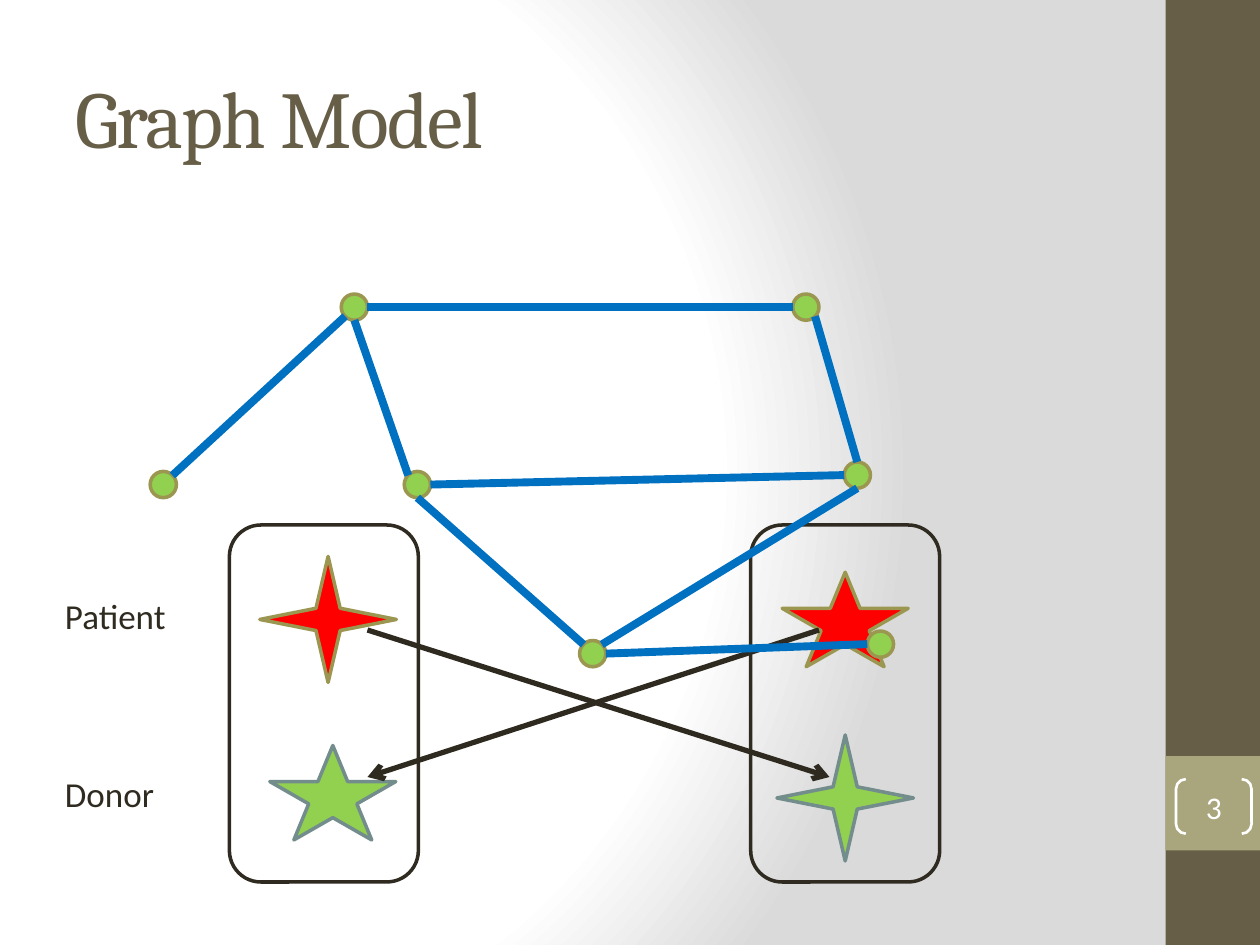
from dataclasses import dataclass
from typing import NamedTuple, Optional

from lxml.etree import SubElement
from pptx import Presentation
from pptx.dml.color import RGBColor
from pptx.enum.shapes import MSO_CONNECTOR as Connector, MSO_SHAPE as Preset
from pptx.enum.text import MSO_ANCHOR as Anchor, PP_ALIGN as Align
from pptx.oxml.ns import qn
from pptx.util import Inches, Pt

COLUMNS, ROWS = 120, 90
SLIDE_WIDTH, SLIDE_HEIGHT = Inches(10), Inches(7.5)


@dataclass(frozen=True)
class Theme:
    heading_font: str = "Cambria"
    body_font: str = "Calibri"
    title_size: float = 46
    label_size: float = 20
    number_size: float = 18
    brown: str = "675E47"
    khaki: str = "A9A57C"
    olive: str = "9B9650"
    slate: str = "738D8C"
    ink: str = "2F2B20"
    arrow: str = "2E2A1F"
    edge: str = "0070C0"
    red: str = "FF0000"
    green: str = "92D050"
    white: str = "FFFFFF"
    gray: str = "DADADA"
    outline: float = 2
    bracket_width: float = 1.5
    arrow_width: float = 3
    edge_width: float = 4.5


THEME = Theme()


class Box(NamedTuple):
    column: float
    row: float
    columns: float
    rows: float

    def at(self, site: tuple) -> tuple:
        return self.column + self.columns * site[0], self.row + self.rows * site[1]


class Figure(NamedTuple):
    preset: Preset
    box: Box
    fill: Optional[str] = None
    line: Optional[str] = None
    width: float = THEME.outline


class Label(NamedTuple):
    text: str
    box: Box
    size: float = THEME.label_size
    font: str = THEME.body_font
    color: str = THEME.ink
    anchor: Anchor = Anchor.TOP
    spacing: int = 0


class Link(NamedTuple):
    start: tuple
    end: tuple
    color: str = THEME.edge
    width: float = THEME.edge_width
    arrow: bool = False


def horizontal(columns: float) -> int:
    return round(SLIDE_WIDTH * columns / COLUMNS)


def vertical(rows: float) -> int:
    return round(SLIDE_HEIGHT * rows / ROWS)


def place(box: Box) -> tuple:
    return horizontal(box.column), vertical(box.row), horizontal(box.columns), vertical(box.rows)


def paint_background(slide) -> None:
    fill = slide.background.fill
    fill.gradient()
    gradient = fill._fill._gradFill
    for child in list(gradient):
        gradient.remove(child)
    stops = SubElement(gradient, qn("a:gsLst"))
    for position, color in ((0, THEME.white), (75, THEME.white), (100, THEME.gray)):
        stop = SubElement(stops, qn("a:gs"), pos=str(position * 1000))
        SubElement(stop, qn("a:srgbClr"), val=color)
    path_element = SubElement(gradient, qn("a:path"), {"path": "circle"})
    SubElement(path_element, qn("a:fillToRect"), l="20000", t="50000", r="100000", b="50000")


def draw_figure(slide, figure: Figure):
    shape = slide.shapes.add_shape(figure.preset, *place(figure.box))
    shape.shadow.inherit = False
    if figure.fill:
        shape.fill.solid()
        shape.fill.fore_color.rgb = RGBColor.from_string(figure.fill)
    else:
        shape.fill.background()
    if figure.line:
        shape.line.color.rgb = RGBColor.from_string(figure.line)
        shape.line.width = Pt(figure.width)
    else:
        shape.line.fill.background()
    return shape


def add_text(paragraph, text: str, size: float, font: str, color: str):
    run = paragraph.add_run()
    run.text = text
    run.font.size = Pt(size)
    run.font.name = font
    run.font.color.rgb = RGBColor.from_string(color)
    return run


def draw_label(slide, label: Label) -> None:
    frame = slide.shapes.add_textbox(*place(label.box)).text_frame
    frame.word_wrap = True
    frame.vertical_anchor = label.anchor
    run = add_text(frame.paragraphs[0], label.text, label.size, label.font, label.color)
    if label.spacing:
        run.font._element.set("spc", str(label.spacing * 100))


def draw_page_number(slide, number: str) -> None:
    shape = draw_figure(slide, Figure(Preset.DOUBLE_BRACKET, Box(112, 74.2, 7.2, 5.2),
                                      line=THEME.white, width=THEME.bracket_width))
    shape.adjustments[0] = 0.18
    frame = shape.text_frame
    frame.margin_left = frame.margin_right = frame.margin_top = frame.margin_bottom = 0
    frame.vertical_anchor = Anchor.MIDDLE
    paragraph = frame.paragraphs[0]
    paragraph.alignment = Align.CENTER
    add_text(paragraph, number, THEME.number_size, THEME.body_font, THEME.white)


def draw_link(slide, link: Link) -> None:
    (start_column, start_row), (end_column, end_row) = link.start, link.end
    connector = slide.shapes.add_connector(
        Connector.STRAIGHT, horizontal(start_column), vertical(start_row),
        horizontal(end_column), vertical(end_row))
    connector.line.color.rgb = RGBColor.from_string(link.color)
    connector.line.width = Pt(link.width)
    if link.arrow:
        SubElement(connector.line._get_or_add_ln(), qn("a:tailEnd"), type="arrow")
    SubElement(connector._element.spPr, qn("a:effectLst"))


NEAR, FAR = 0.15, 0.85
TOP, LEFT, BOTTOM, RIGHT = (0.5, 0), (0, 0.5), (0.5, 1), (1, 0.5)
TOP_LEFT, TOP_RIGHT, BOTTOM_LEFT, BOTTOM_RIGHT = (NEAR, NEAR), (FAR, NEAR), (NEAR, FAR), (FAR, FAR)

NODES = {name: Box(column, row, 2.5, 2.5) for name, column, row in (
    ("upper left", 32.5, 28), ("upper right", 75.5, 28), ("middle", 38.5, 44.9),
    ("lower", 55.2, 61), ("right", 80.4, 44), ("left", 14.3, 44.9), ("last", 82.6, 60.1))}

EDGES = (
    ("upper left", RIGHT, "upper right", LEFT),
    ("left", TOP_RIGHT, "upper left", BOTTOM_LEFT),
    ("middle", TOP_LEFT, "upper left", BOTTOM),
    ("right", TOP, "upper right", BOTTOM_RIGHT),
    ("middle", RIGHT, "right", LEFT),
    ("middle", BOTTOM, "lower", TOP_LEFT),
    ("lower", TOP_RIGHT, "right", BOTTOM),
    ("last", LEFT, "lower", RIGHT))

FIGURES = (
    Figure(Preset.RECTANGLE, Box(111, 0, 9, ROWS), THEME.brown),
    Figure(Preset.RECTANGLE, Box(111, 72, 9, 9), THEME.khaki),
    Figure(Preset.STAR_4_POINT, Box(24.75, 53, 13, 12), THEME.red, THEME.olive),
    Figure(Preset.STAR_5_POINT, Box(25.7, 71, 12, 9), THEME.green, THEME.slate),
    Figure(Preset.STAR_4_POINT, Box(74, 70, 13, 12), THEME.green, THEME.slate),
    Figure(Preset.STAR_5_POINT, Box(74.5, 54.5, 12, 9), THEME.red, THEME.olive),
    *(Figure(Preset.ROUNDED_RECTANGLE, Box(column, 50, 18, 34), line=THEME.ink)
      for column in (21.85, 71.5)))

LABELS = (
    Label("Graph Model", Box(6, 3.6, 100, 15), THEME.title_size, THEME.heading_font,
          THEME.brown, Anchor.MIDDLE, -1),
    Label("Patient", Box(5, 56, 14, 5.3)),
    Label("Donor", Box(5, 73, 12, 5.3)))

ARROWS = tuple(Link(start, end, THEME.arrow, THEME.arrow_width, True)
               for start, end in (((35, 60), (79, 74)), ((78, 60), (35, 74))))


def main() -> None:
    presentation = Presentation()
    presentation.slide_width, presentation.slide_height = SLIDE_WIDTH, SLIDE_HEIGHT
    slide = presentation.slides.add_slide(presentation.slide_layouts[6])
    paint_background(slide)
    for figure in FIGURES:
        draw_figure(slide, figure)
    for label in LABELS:
        draw_label(slide, label)
    draw_page_number(slide, "3")
    for arrow in ARROWS:
        draw_link(slide, arrow)
    for box in NODES.values():
        draw_figure(slide, Figure(Preset.FLOWCHART_CONNECTOR, box, THEME.green, THEME.olive))
    for start, start_site, end, end_site in EDGES:
        draw_link(slide, Link(NODES[start].at(start_site), NODES[end].at(end_site)))
    presentation.save("out.pptx")


if __name__ == "__main__":
    main()
